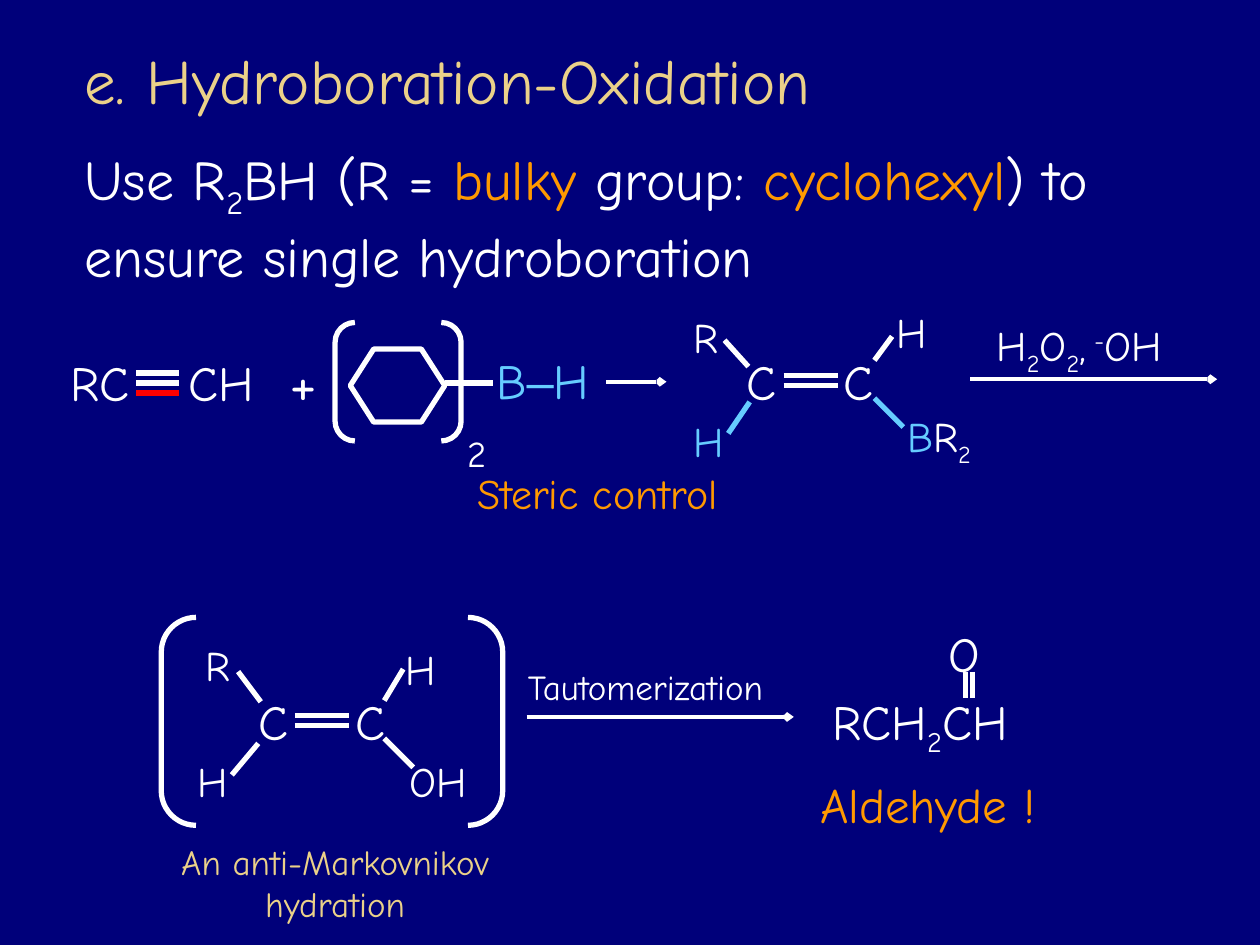
"""Build the hydroboration-oxidation reaction slide."""
import pptx
import pptx.dml.color
import pptx.enum.shapes
import pptx.enum.text
import pptx.oxml
import pptx.oxml.ns
import pptx.util

Inches = pptx.util.Inches
FONT = "Comic Neue"
NAVY, WHITE, GOLD = "00007A", "FFFFFF", "EBD189"
ORANGE, BLUE, RED = "FF9900", "66CCFF", "FF0000"
SUB, SUPER = -25, 30

TITLE = ((0.57, 0.28, 9.07, 0.7), 36, GOLD, ["e. Hydroboration-Oxidation"])

# Each run is plain text or (text, {colour, base, font}).
LABELS = [
    ((0.57, 1.1, 9.07, 1.23), 32, WHITE, [
        "Use R", ("2", {"base": SUB}), "BH (R = ", ("bulky ", {"colour": ORANGE}), "group: ",
        ("cyclohexyl", {"colour": ORANGE}), ") to ensure single hydroboration"]),
    ((0.46, 2.75, 0.75, 0.57), 28, WHITE, ["RC"]),
    ((1.4, 2.75, 0.77, 0.57), 28, WHITE, ["CH"]),
    ((2.2, 2.67, 0.58, 0.7), 36, WHITE, ["+"]),
    ((3.84, 2.73, 1.23, 0.57), 28, BLUE, ["B", ("‒", {"font": "Arial"}), "H"]),
    ((3.61, 3.31, 0.38, 0.5), 36, WHITE, [("2", {"base": SUPER})]),
    ((5.41, 2.42, 0.44, 0.5), 24, WHITE, ["R"]),
    ((5.41, 3.25, 0.44, 0.5), 24, BLUE, ["H"]),
    ((7.02, 2.38, 0.48, 0.5), 24, WHITE, ["H"]),
    ((7.1, 3.21, 0.79, 0.5), 24, WHITE, [("B", {"colour": BLUE}), "R", ("2", {"base": SUB})]),
    ((7.81, 2.49, 1.98, 0.5), 24, WHITE, [
        "H", ("2", {"base": SUB}), "O", ("2", {"base": SUB}), ",", (" -", {"base": SUPER}), "OH"]),
    ((3.69, 3.66, 2.46, 0.5), 24, ORANGE, ["Steric control"]),
    ((1.53, 5.03, 0.44, 0.5), 24, WHITE, ["R"]),
    ((1.47, 5.95, 0.44, 0.5), 24, WHITE, ["H"]),
    ((3.12, 5.06, 0.48, 0.5), 24, WHITE, ["H"]),
    ((3.15, 5.95, 0.79, 0.5), 24, WHITE, ["OH"]),
    ((4.09, 5.23, 2.52, 0.43), 20, WHITE, ["Tautomerization"]),
    ((6.51, 5.44, 1.71, 0.57), 28, WHITE, ["RCH", ("2", {"base": SUB}), "CH"]),
    ((7.43, 4.9, 0.35, 0.57), 28, WHITE, ["O"]),
    ((6.41, 6.1, 2.28, 0.57), 28, ORANGE, ["Aldehyde !"]),
]
CAPTION = ((1.2, 6.62, 2.92, 0.77), 20, GOLD, ["An anti-Markovnikov hydration"])

BONDS = [
    ((3.53, 3.04, 3.91, 3.04), WHITE),
    ((5.75, 2.7, 5.94, 2.91), WHITE),
    ((5.78, 3.44, 5.95, 3.19), BLUE),
    ((7.08, 2.67, 6.94, 2.86), WHITE),
    ((7.17, 3.39, 6.94, 3.16), BLUE),
    ((1.89, 5.33, 2.07, 5.57), WHITE),
    ((1.84, 6.15, 2.05, 5.9), WHITE),
    ((3.2, 5.31, 3.05, 5.56), WHITE),
    ((3.28, 6.09, 3.05, 5.86), WHITE),
]
TRIPLE_BOND = [WHITE, WHITE, RED]
CARBONYL_BOND = [7.66, 7.72]
ALKENES = [(5.83, 2.74), (1.95, 5.44)]
ARROWS = [(4.81, 3.03, 5.29, 3.03), (7.7, 3.01, 9.66, 3.01), (4.18, 5.69, 6.3, 5.69)]
BRACKETS = [(2.66, 2.56, 1, 0.94), (1.28, 4.9, 2.71, 1.65)]
CYCLOHEXYL = (2.78, 2.77, 0.75, 0.58)


def rgb(value):
    return pptx.dml.color.RGBColor.from_string(value)


def write(shape, size, colour, runs, align=pptx.enum.text.PP_ALIGN.LEFT):
    frame = shape.text_frame
    frame.word_wrap = True
    frame.auto_size = pptx.enum.text.MSO_AUTO_SIZE.NONE
    frame.vertical_anchor = pptx.enum.text.MSO_ANCHOR.TOP
    paragraph = frame.paragraphs[0]
    paragraph.alignment = align
    paragraph.font.size = pptx.util.Pt(size)
    paragraph.font.name = FONT
    paragraph.font.color.rgb = rgb(colour)
    for item in runs:
        text, style = (item, {}) if isinstance(item, str) else item
        run = paragraph.add_run()
        run.text = text
        if "colour" in style:
            run.font.color.rgb = rgb(style["colour"])
        if "font" in style:
            run.font.name = style["font"]
        if "base" in style:
            run._r.get_or_add_rPr().set("baseline", str(style["base"] * 1000))


def add_label(slide, box, *text):
    write(slide.shapes.add_textbox(*map(Inches, box)), *text)


def add_line(slide, ends, colour=WHITE, width=3.0, arrow=False):
    connector = slide.shapes.add_connector(
        pptx.enum.shapes.MSO_CONNECTOR.STRAIGHT, *map(Inches, ends))
    connector.line.color.rgb = rgb(colour)
    connector.line.width = pptx.util.Pt(width)
    if arrow:
        namespace = pptx.oxml.ns.nsdecls("a")
        connector.line._get_or_add_ln().append(pptx.oxml.parse_xml(
            f'<a:tailEnd {namespace} type="arrow" w="sm" len="sm"/>'))
    properties = connector._element.spPr
    properties.append(properties.makeelement(pptx.oxml.ns.qn("a:effectLst"), {}))


def add_outline(slide, kind, box, adjustments):
    shape = slide.shapes.add_shape(kind, *map(Inches, box))
    for index, value in enumerate(adjustments):
        shape.adjustments[index] = value
    shape.shadow.inherit = False
    shape.fill.background()
    shape.line.color.rgb = rgb(WHITE)
    shape.line.width = pptx.util.Pt(3)


def add_alkene_core(slide, left, top):
    for offset in (0, 0.77):
        add_label(slide, (left + offset, top, 0.56, 0.57), 28, WHITE, ["C"])
    for offset in (0.24, 0.32):
        add_line(slide, (left + 0.39, top + offset, left + 0.82, top + offset))


def main():
    presentation = pptx.Presentation()
    presentation.slide_width, presentation.slide_height = Inches(10), Inches(7.5)
    slide = presentation.slides.add_slide(presentation.slide_layouts[5])
    slide.background.fill.solid()
    slide.background.fill.fore_color.rgb = rgb(NAVY)

    title_box, *title_text = TITLE
    title = slide.shapes.title
    title.left, title.top, title.width, title.height = map(Inches, title_box)
    write(title, *title_text)

    for label in LABELS:
        add_label(slide, *label)
    add_label(slide, *CAPTION, pptx.enum.text.PP_ALIGN.CENTER)

    for row, colour in enumerate(TRIPLE_BOND):
        y = 2.96 + 0.08 * row
        add_line(slide, (1.08, y, 1.42, y), colour)
    for x in CARBONYL_BOND:
        add_line(slide, (x, 5.33, x, 5.54))
    for ends, colour in BONDS:
        add_line(slide, ends, colour)
    for corner in ALKENES:
        add_alkene_core(slide, *corner)
    for ends in ARROWS:
        add_line(slide, ends, width=2.25, arrow=True)

    kinds = pptx.enum.shapes.MSO_SHAPE
    add_outline(slide, kinds.HEXAGON, CYCLOHEXYL, [0.321, 1.155])
    for box in BRACKETS:
        add_outline(slide, kinds.DOUBLE_BRACKET, box, [0.167])
    presentation.save("out.pptx")


if __name__ == "__main__":
    main()
